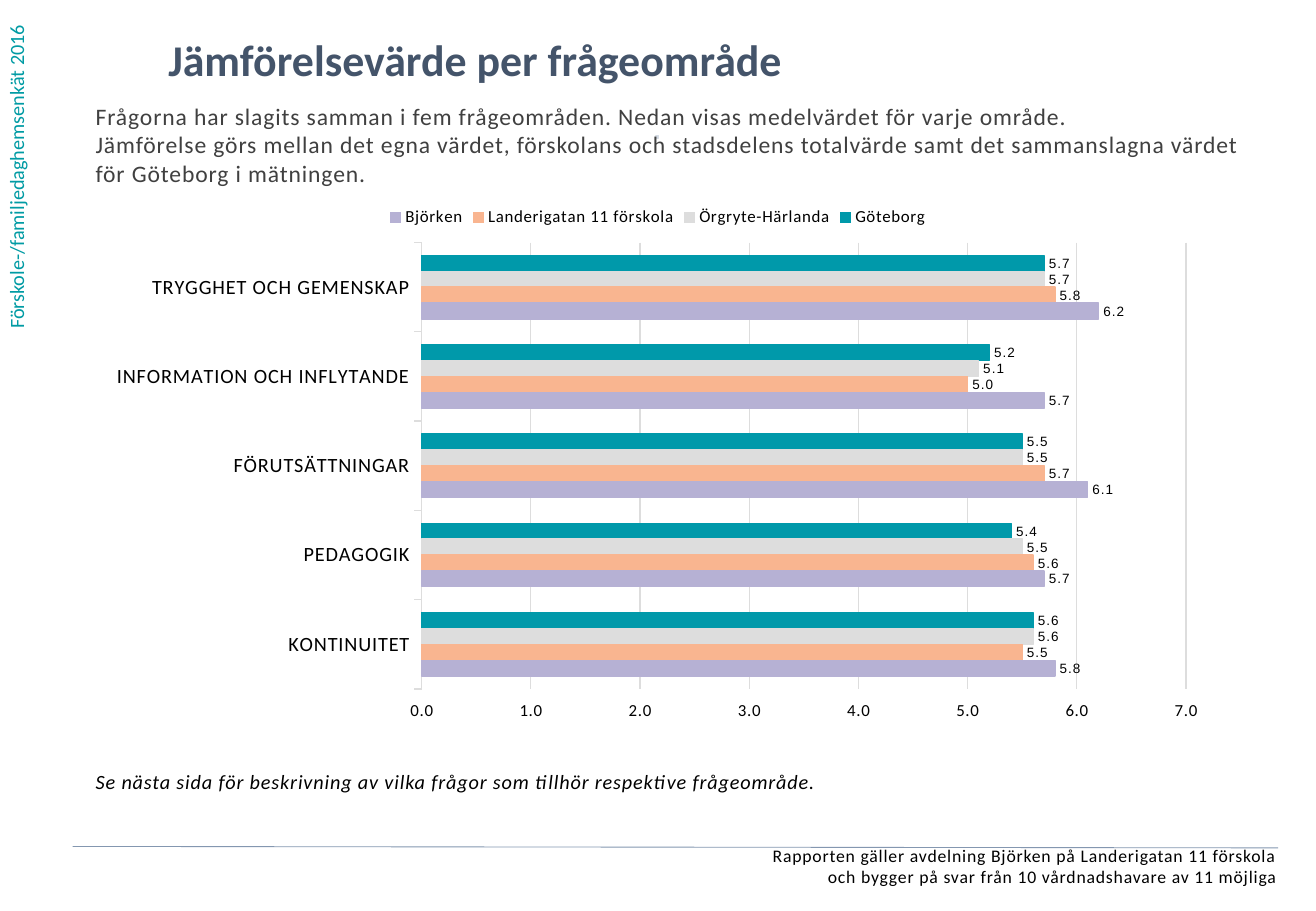
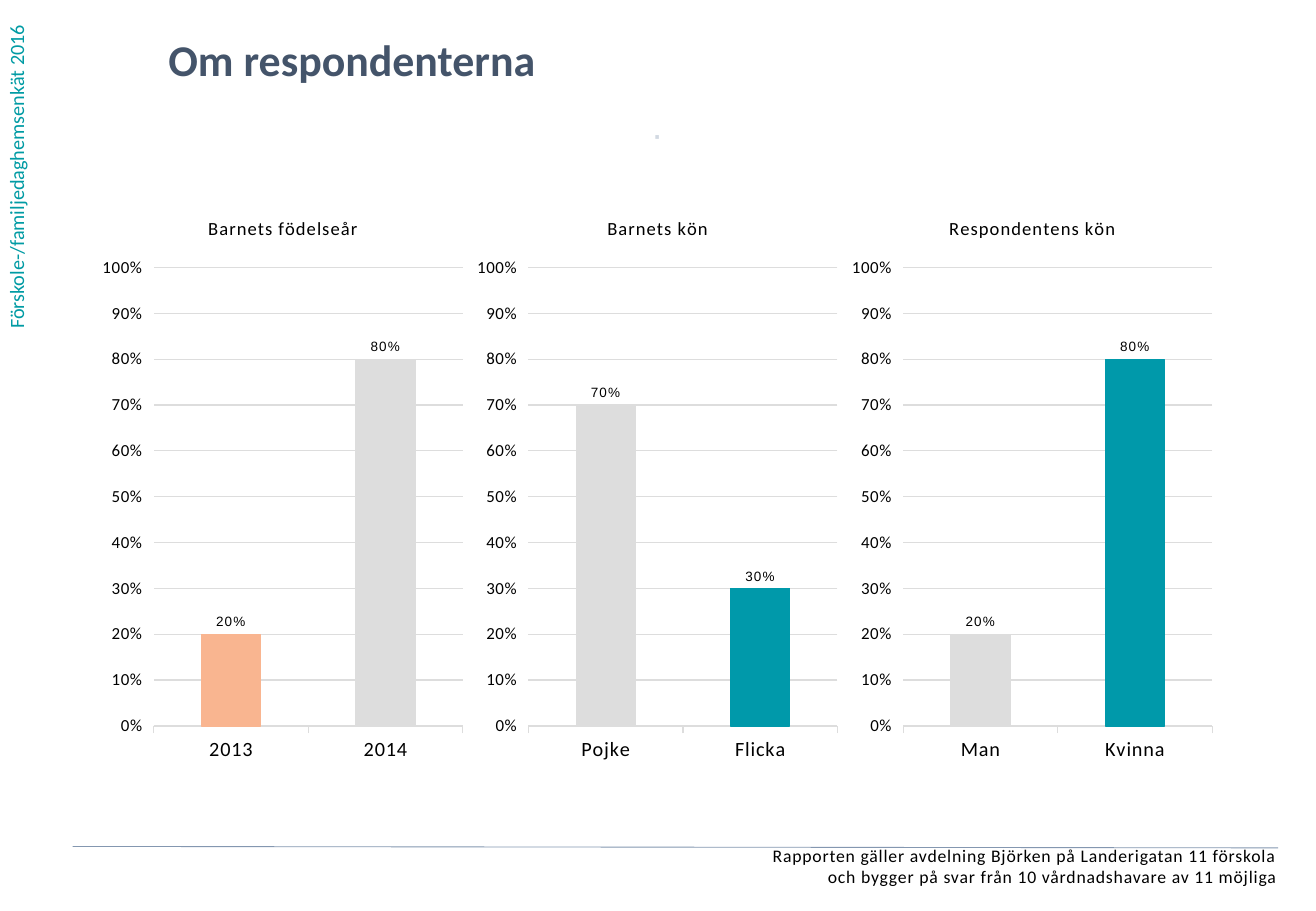
from lxml import etree
from pptx import Presentation
from pptx.chart.data import CategoryChartData
from pptx.dml.color import RGBColor
from pptx.enum.chart import (XL_CHART_TYPE, XL_LABEL_POSITION,
                             XL_LEGEND_POSITION, XL_TICK_LABEL_POSITION,
                             XL_TICK_MARK)
from pptx.enum.shapes import MSO_CONNECTOR
from pptx.enum.text import PP_ALIGN
from pptx.oxml.ns import qn
from pptx.util import Cm, Pt

BAR, COLUMN = XL_CHART_TYPE.BAR_CLUSTERED, XL_CHART_TYPE.COLUMN_CLUSTERED
LABELS_HIGH = XL_TICK_LABEL_POSITION.HIGH
OUTSIDE_END = XL_LABEL_POSITION.OUTSIDE_END
LEGEND_TOP = XL_LEGEND_POSITION.TOP
TICK_OUTSIDE, TICK_NONE = XL_TICK_MARK.OUTSIDE, XL_TICK_MARK.NONE
LEFT, CENTER, RIGHT = PP_ALIGN.LEFT, PP_ALIGN.CENTER, PP_ALIGN.RIGHT

# Shared colours and text styles
BLACK, TEAL, GREY = "000000", "0099AA", "DDDDDD"
PEACH, LILAC = "F9B590", "B6B1D4"
SPACING = "50"  # hundredths of a point
SIDEBAR_STYLE = {"size": 12, "color": "009BA4"}
TITLE_STYLE = {"size": 26, "color": "44546A", "bold": True}
INTRO_STYLE = {"size": 14, "color": "404040"}
NOTE_STYLE = {"size": 12, "color": BLACK, "italic": True}
FOOTER_STYLE = {"size": 10.5, "color": BLACK}
DOT_STYLE = {"size": 12, "color": "D2D9E2", "bold": True}

# Shared regions in cm: left, top, width, height
SIDEBAR_BOX = (0.08, 0, 0.84, 6.88)
TITLE_BOX = (3.52, 0.69, 21.18, 1.45)
INTRO_BOX = (2, 2.13, 24.03, 1.9)
DOT_BOX = (9.83, 2.59, 7.82, 0.99)
FOOTER_BOX = (0.3, 17.66, 26.4, 1.09)
NOTE_BOX = (2, 16.08, 23.5, 0.65)
BAR_BOX = (2, 4.06, 23.5, 11.25)
COLUMNS_BOX = (2, 4.06, 23.5, 12.09)
RULE_ENDS = (1.52, 17.7, 26.72, 17.73)

# Plot areas as fractions of the chart: x, y, w, h
BAR_PLOT = (0.29, 0.09, 0.68, 0.83)
COLUMN_PLOT = (0.155, 0.127, 0.825, 0.793)

AREAS = ["TRYGGHET OCH GEMENSKAP", "INFORMATION OCH INFLYTANDE",
         "FÖRUTSÄTTNINGAR", "PEDAGOGIK", "KONTINUITET"]
AREA_SERIES = [
    ("Göteborg", (5.7, 5.2, 5.5, 5.4, 5.6), TEAL),
    ("Örgryte-Härlanda", (5.7, 5.1, 5.5, 5.5, 5.6), GREY),
    ("Landerigatan 11 förskola", (5.8, 5.0, 5.7, 5.6, 5.5), PEACH),
    ("Björken", (6.2, 5.7, 6.1, 5.7, 5.8), LILAC),
]
RESPONDENTS = [
    ("Barnets födelseår", ("2014", "2013"), (0.8, 0.2), (GREY, PEACH)),
    ("Barnets kön", ("Flicka", "Pojke"), (0.3, 0.7), (TEAL, GREY)),
    ("Respondentens kön", ("Kvinna", "Man"), (0.8, 0.2), (TEAL, GREY)),
]


def rgb(value):
    return RGBColor.from_string(value)


def style_font(font, size, color=BLACK, name="Calibri", **flags):
    font.color.rgb = rgb(color)
    for attribute, value in {"size": Pt(size), "name": name, **flags}.items():
        setattr(font, attribute, value)


def add_text(slide, box, text, style, align=LEFT, spaced=True):
    shape = slide.shapes.add_textbox(*map(Cm, box))
    frame = shape.text_frame
    frame.word_wrap = True
    for side in ("left", "top", "right", "bottom"):
        setattr(frame, f"margin_{side}", 0)
    paragraph = frame.paragraphs[0]
    paragraph.text = text
    paragraph.alignment = align
    for run in paragraph.runs:
        style_font(run.font, **style)
        if spaced:
            run.font._element.set("spc", SPACING)
    return shape


def add_rule(slide, ends):
    rule = slide.shapes.add_connector(MSO_CONNECTOR.STRAIGHT, *map(Cm, ends))
    rule.line.color.rgb = rgb("8497B0")
    rule.line.width = Pt(0.5)
    etree.SubElement(rule._element.spPr, qn("a:effectLst"))


def add_base_slide(presentation, title):
    """Blank slide with the sidebar, title, dot, footer and rule."""
    slide = presentation.slides.add_slide(presentation.slide_layouts[6])
    sidebar = add_text(slide, SIDEBAR_BOX, "Förskole-/familjedaghemsenkät 2016",
                       SIDEBAR_STYLE, spaced=False)
    sidebar.text_frame._txBody.bodyPr.set("vert", "vert270")
    add_text(slide, TITLE_BOX, title, TITLE_STYLE, spaced=False)
    add_text(slide, DOT_BOX, "⋅", DOT_STYLE, CENTER)
    add_text(slide, FOOTER_BOX,
             "Rapporten gäller avdelning Björken på Landerigatan 11 förskola\n"
             "och bygger på svar från 10 vårdnadshavare av 11 möjliga",
             FOOTER_STYLE, RIGHT)
    add_rule(slide, RULE_ENDS)
    return slide


def paint(chart_format, color):
    chart_format.fill.solid()
    chart_format.fill.fore_color.rgb = rgb(color)
    style_line(chart_format.line, color)


def style_line(line, color=GREY):
    line.color.rgb = rgb(color)
    line.width = Pt(0.75)


def set_plot_area(chart, fractions):
    plot_area = chart.element.find(".//" + qn("c:plotArea"))
    for layout in plot_area.findall(qn("c:layout")):
        plot_area.remove(layout)
    layout = etree.Element(qn("c:layout"))
    manual = etree.SubElement(layout, qn("c:manualLayout"))
    settings = [("layoutTarget", "inner"), ("xMode", "edge"), ("yMode", "edge")]
    settings += zip("xywh", fractions)
    for tag, value in settings:
        etree.SubElement(manual, qn(f"c:{tag}")).set("val", str(value))
    plot_area.insert(0, layout)


def style_axes(chart, maximum, step, number_format):
    category, value = chart.category_axis, chart.value_axis
    category.reverse_order = True
    category.has_major_gridlines = False
    style_line(category.format.line)
    style_font(category.tick_labels.font, 12)

    # The reversed categories put the high end at the bottom or left
    value.tick_label_position = LABELS_HIGH
    value.minimum_scale, value.maximum_scale = 0, maximum
    value.major_unit = step
    value.format.line.fill.background()
    style_line(value.major_gridlines.format.line)
    style_font(value.tick_labels.font, 10)
    value.tick_labels.number_format = number_format
    value.tick_labels.number_format_is_linked = False
    for axis in (category, value):
        axis.major_tick_mark, axis.minor_tick_mark = TICK_OUTSIDE, TICK_NONE


def add_bar_chart(slide, box, kind, categories, series_list, maximum, step,
                  number_format, plot_fractions, title=None):
    data = CategoryChartData(number_format=number_format)
    data.categories = categories
    for name, values, _ in series_list:
        data.add_series(name, values)
    chart = slide.shapes.add_chart(kind, *map(Cm, box), data).chart
    style_font(chart.font, 10)
    plot = chart.plots[0]
    plot.gap_width = 162
    plot.vary_by_categories = False
    style_axes(chart, maximum, step, number_format)
    set_plot_area(chart, plot_fractions)

    # Series; a tuple of colours paints the points one by one
    for series, (_, _, colors) in zip(plot.series, series_list):
        series.invert_if_negative = False
        if isinstance(colors, tuple):
            paint(series.format, TEAL)
            for index, color in enumerate(colors):
                paint(series.points[index].format, color)
        else:
            paint(series.format, colors)
        labels = series.data_labels
        style_font(labels.font, 8, name="Arial")
        for attribute, value in {"show_value": True, "position": OUTSIDE_END,
                                 "number_format": number_format,
                                 "number_format_is_linked": False}.items():
            setattr(labels, attribute, value)

    # Title or legend
    chart.has_title = title is not None
    chart.has_legend = title is None
    if title:
        chart.chart_title.include_in_layout = False
        paragraph = chart.chart_title.text_frame.paragraphs[0]
        run = paragraph.add_run()
        run.text = title
        style_font(run.font, 11, bold=False)
    else:
        chart.legend.position = LEGEND_TOP
        chart.legend.include_in_layout = False
        style_font(chart.legend.font, 10)
    for properties in chart.element.iter(qn("a:defRPr"), qn("a:rPr")):
        properties.set("spc", SPACING)


def add_comparison_slide(presentation):
    slide = add_base_slide(presentation, "Jämförelsevärde per frågeområde")
    add_text(slide, INTRO_BOX,
             "Frågorna har slagits samman i fem frågeområden. "
             "Nedan visas medelvärdet för varje område.\n"
             "Jämförelse görs mellan det egna värdet, förskolans och "
             "stadsdelens totalvärde samt det sammanslagna värdet "
             "för Göteborg i mätningen.", INTRO_STYLE)
    add_text(slide, NOTE_BOX,
             "Se nästa sida för beskrivning av vilka frågor som tillhör "
             "respektive frågeområde.", NOTE_STYLE)
    add_bar_chart(slide, BAR_BOX, BAR, AREAS, AREA_SERIES, 7, 1, "0.0;0.0",
                  BAR_PLOT)


def add_respondents_slide(presentation):
    slide = add_base_slide(presentation, "Om respondenterna")
    left, top, total_width, height = COLUMNS_BOX
    width = total_width / len(RESPONDENTS)
    for index, (title, categories, values, colors) in enumerate(RESPONDENTS):
        box = (left + index * width, top, width, height)
        add_bar_chart(slide, box, COLUMN, categories,
                      [("Series 1", values, colors)], 1, 0.1, "0%;0%",
                      COLUMN_PLOT, title)


def main():
    presentation = Presentation()
    presentation.slide_width, presentation.slide_height = Cm(27.51), Cm(19.05)
    add_comparison_slide(presentation)
    add_respondents_slide(presentation)
    presentation.save("out.pptx")


if __name__ == "__main__":
    main()
